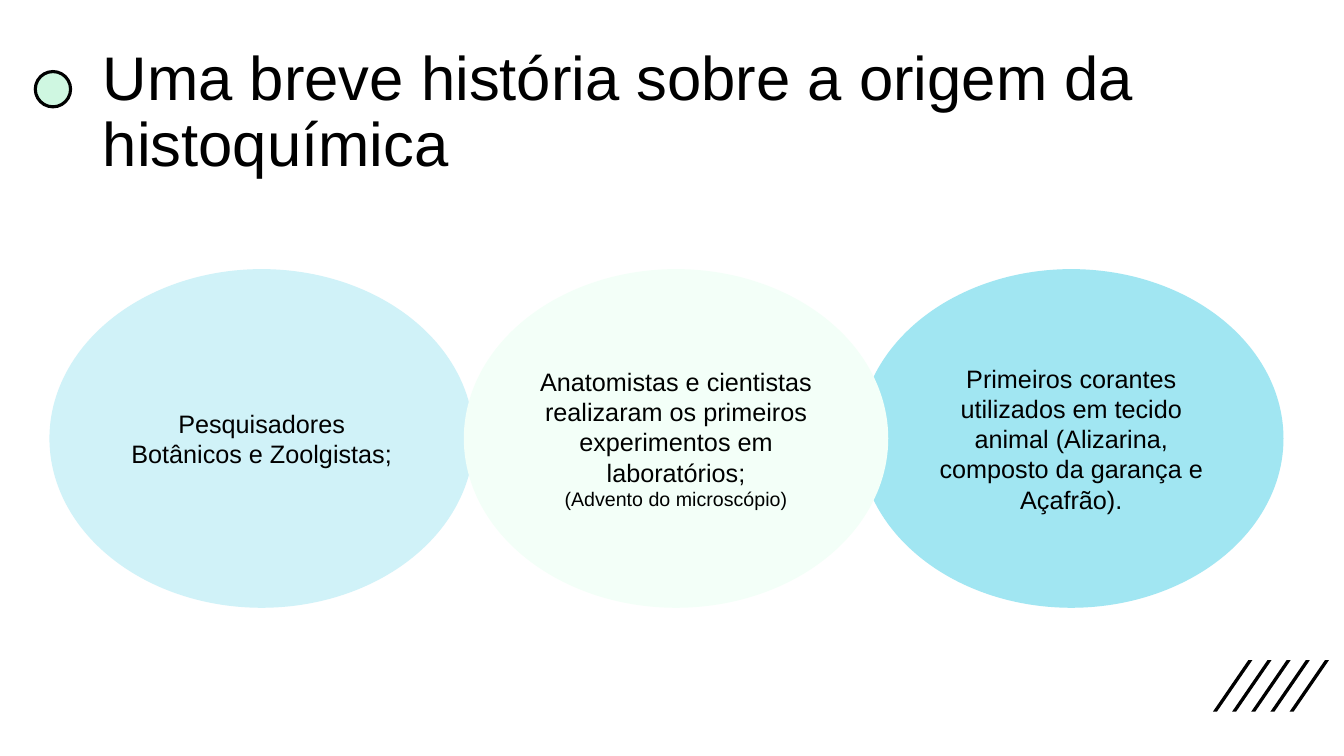
from pptx import Presentation
from pptx.dml.color import RGBColor
from pptx.enum.shapes import MSO_SHAPE
from pptx.enum.text import MSO_ANCHOR, MSO_AUTO_SIZE, PP_ALIGN
from pptx.util import Inches, Pt

OVAL = MSO_SHAPE.OVAL
MIDDLE = MSO_ANCHOR.MIDDLE
NO_AUTOFIT = MSO_AUTO_SIZE.NONE
LEFT, CENTER = PP_ALIGN.LEFT, PP_ALIGN.CENTER

BLACK = RGBColor(0x00, 0x00, 0x00)
WHITE = RGBColor(0xFF, 0xFF, 0xFF)
MINT = RGBColor(0xCF, 0xF7, 0xE1)
PALE_MINT = RGBColor(0xF3, 0xFF, 0xF8)
PALE_BLUE = RGBColor(0xD0, 0xF2, 0xF8)
SKY_BLUE = RGBColor(0xA1, 0xE6, 0xF2)

STAGES = [
    (8.52, SKY_BLUE, [
        ("Primeiros corantes utilizados em tecido animal "
         "(Alizarina, composto da garança e Açafrão).", 18)]),
    (0.49, PALE_BLUE, [("Pesquisadores Botânicos e Zoolgistas;", 18)]),
    (4.6, PALE_MINT, [
        ("Anatomistas e cientistas realizaram os primeiros "
         "experimentos em laboratórios;", 18),
        ("(Advento do microscópio)", 14)]),
]


class SlideBuilder:
    font = "Arial"
    ink = BLACK

    def __init__(self, deck):
        self.page = deck.slides.add_slide(deck.slide_layouts[5])
        self.page.background.fill.solid()
        self.page.background.fill.fore_color.rgb = WHITE

    def fill_text(self, frame, paragraphs, align, spacing=1.0, side_inset=0.1):
        frame.word_wrap = True
        frame.auto_size = NO_AUTOFIT
        frame.vertical_anchor = MIDDLE
        frame.margin_left = frame.margin_right = Inches(side_inset)
        frame.margin_top = frame.margin_bottom = Inches(0.05)
        for index, (text, size) in enumerate(paragraphs):
            para = frame.add_paragraph() if index else frame.paragraphs[0]
            para.alignment = align
            para.line_spacing = spacing
            span = para.add_run()
            span.text = text
            span.font.name = self.font
            span.font.size = Pt(size)
            span.font.color.rgb = self.ink

    def title(self, text, left, top, width, height):
        box = self.page.shapes.title
        box.left, box.top = Inches(left), Inches(top)
        box.width, box.height = Inches(width), Inches(height)
        self.fill_text(box.text_frame, [(text, 44)], LEFT, spacing=0.9)

    def paint(self, shape, fill, line_width=0):
        shape.shadow.inherit = False
        shape.fill.solid()
        shape.fill.fore_color.rgb = fill
        if line_width:
            shape.line.color.rgb = self.ink
            shape.line.width = Pt(line_width)
        else:
            shape.line.fill.background()

    def ellipse(self, left, top, width, height, fill, line_width=0, paragraphs=()):
        shape = self.page.shapes.add_shape(
            OVAL, Inches(left), Inches(top), Inches(width), Inches(height))
        self.paint(shape, fill, line_width)
        self.fill_text(shape.text_frame, paragraphs, CENTER, side_inset=0.13)

    def slash(self, left, top, width, height, thickness):
        bottom, right = top + height, left + width
        corners = [(left + thickness, bottom), (left, bottom),
                   (right - thickness, top), (right, top)]
        points = [(Inches(x), Inches(y)) for x, y in corners]
        outline = self.page.shapes.build_freeform(*points[0])
        outline.add_line_segments(points[1:], close=True)
        self.paint(outline.convert_to_shape(), self.ink)


def main():
    deck = Presentation()
    deck.slide_width, deck.slide_height = Inches(13.33), Inches(7.5)
    builder = SlideBuilder(deck)
    for index in range(5):
        builder.slash(12.03 + 0.19 * index, 6.55, 0.39, 0.51, 0.04)
    builder.ellipse(0.35, 0.71, 0.35, 0.35, MINT, line_width=2.25)
    builder.title("Uma breve história sobre a origem da histoquímica",
                  0.92, 0.4, 11.5, 1.45)
    for left, fill, paragraphs in STAGES:
        builder.ellipse(left, 2.67, 4.21, 3.36, fill, paragraphs=paragraphs)
    deck.save("out.pptx")


if __name__ == "__main__":
    main()
